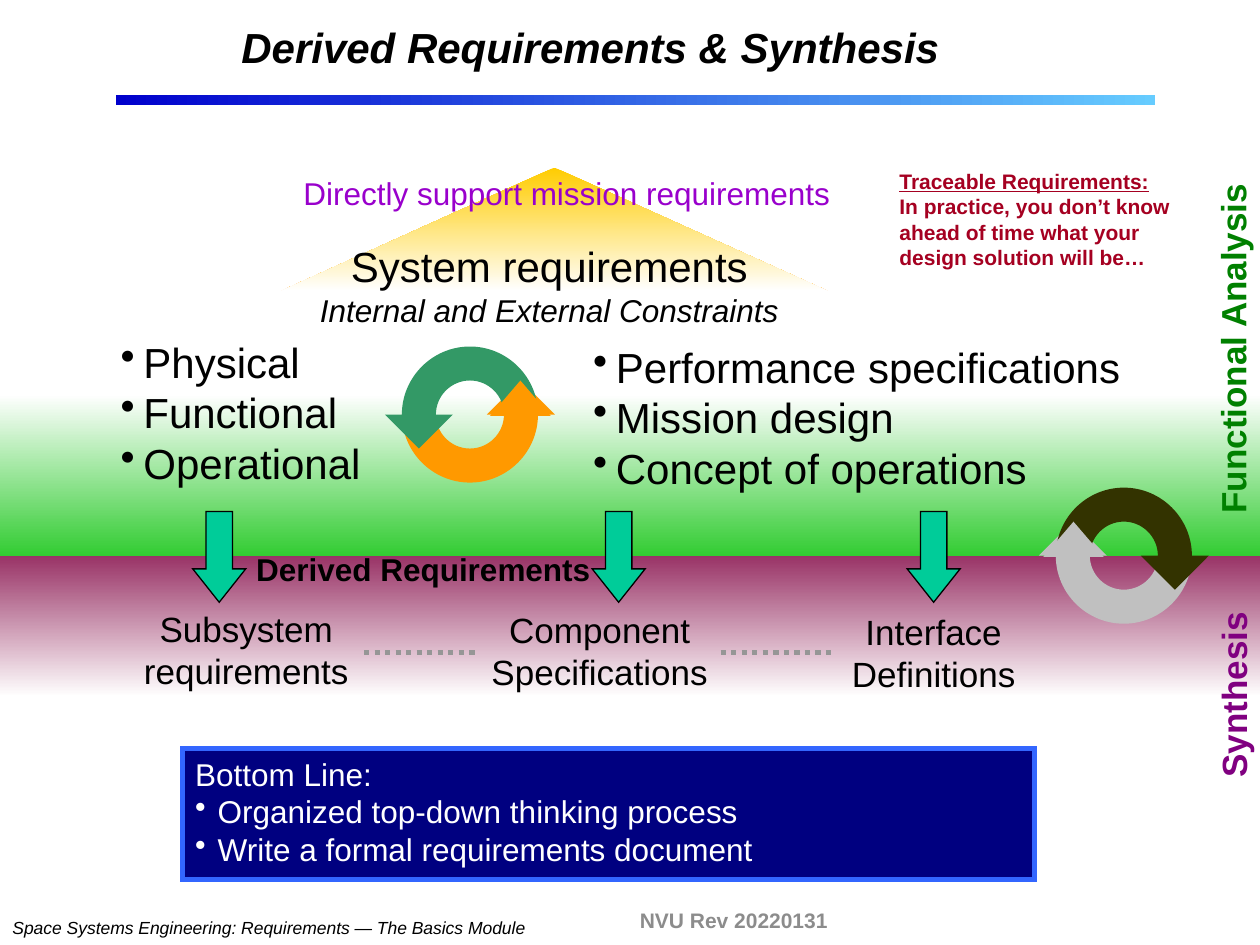
from dataclasses import dataclass

from lxml import etree
from pptx import Presentation
from pptx import util as u
from pptx.dml.color import RGBColor
from pptx.enum import dml, shapes, text
from pptx.oxml.ns import qn


@dataclass(frozen=True)
class Theme:
    font: str = "Arial"
    black: str = "000000"
    white: str = "FFFFFF"
    teal: str = "00CC99"
    dots: str = "969696"
    purple: str = "800080"
    green: str = "008000"
    violet: str = "9900CC"
    crimson: str = "A50021"
    footer: str = "8C8C8C"
    navy: str = "000080"
    frame: str = "3366FF"
    heading: int = 24
    label: int = 20
    body: int = 18
    note: int = 12
    small: int = 10


THEME = Theme()
SHAPE = shapes.MSO_SHAPE
CENTER = text.PP_ALIGN.CENTER
MIDDLE = text.MSO_ANCHOR.MIDDLE


def rgb(code):
    return RGBColor.from_string(code)


def place(box):
    return [u.Inches(value) for value in box]


def set_bullet(paragraph):
    properties = paragraph._p.get_or_add_pPr()
    etree.SubElement(properties, qn("a:buFontTx"))
    etree.SubElement(properties, qn("a:buChar"), char="•")


def write(frame, lines, size, color=THEME.black, align=None, anchor=None,
          wrap=True, indent=0):
    """Fill a text frame; each line is a string or (string, format values)."""
    frame.word_wrap = wrap
    frame.vertical_anchor = anchor or text.MSO_ANCHOR.TOP
    if anchor is None:
        frame.auto_size = text.MSO_AUTO_SIZE.SHAPE_TO_FIT_TEXT
    for index, line in enumerate(lines):
        content, extra = line if isinstance(line, tuple) else (line, {})
        extra = dict(extra)
        bulleted = extra.pop("bullet", False)
        paragraph = frame.paragraphs[0] if index == 0 else frame.add_paragraph()
        paragraph.alignment = align or text.PP_ALIGN.LEFT
        if indent:
            properties = paragraph._p.get_or_add_pPr()
            properties.set("marL", str(u.Inches(indent)))
            properties.set("indent", str(-u.Inches(indent)))
        if bulleted:
            set_bullet(paragraph)
        run = paragraph.add_run()
        run.text = content
        values = {"name": THEME.font, "size": u.Pt(size), **extra}
        for key, value in values.items():
            setattr(run.font, key, value)
        run.font.color.rgb = rgb(color)


def add_text(slide, box, lines, size, rotation=0, **options):
    label = slide.shapes.add_textbox(*place(box))
    label.rotation = rotation
    write(label.text_frame, lines, size, **options)


def paint(shape, fill, line=None, width=0):
    shape.shadow.inherit = False
    shape.fill.solid()
    shape.fill.fore_color.rgb = rgb(fill)
    if line:
        shape.line.color.rgb = rgb(line)
        shape.line.width = u.Pt(width)
        etree.SubElement(shape.line._get_or_add_ln(), qn("a:miter"), lim="800000")
    else:
        shape.line.fill.background()


def add_gradient(slide, kind, box, colors, angle=270):
    """Angle is counter-clockwise, so 270 runs from top to bottom."""
    shape = slide.shapes.add_shape(kind, *place(box))
    shape.shadow.inherit = False
    shape.line.fill.background()
    shape.fill.gradient()
    shape.fill.gradient_angle = angle
    for stop, color in zip(shape.fill.gradient_stops, colors):
        stop.color.rgb = rgb(color)


def bend(shape, starts):
    """Turn each three lines from the given indexes into one cubic curve."""
    lines = list(shape._element.iter(qn("a:lnTo")))
    for start in starts:
        trio = lines[start:start + 3]
        curve = etree.Element(qn("a:cubicBezTo"))
        trio[0].addprevious(curve)
        for line in trio:
            curve.append(line[0])
            line.getparent().remove(line)


def add_half_ring(slide, center, half, head, color):
    """Half ring with an arrowhead; half is 1 below, head is 1 at the right."""
    (cx, cy), outer, inner = center, 0.54, 0.27
    middle, reach = (outer + inner) / 2, 0.27
    k = 0.55
    arc = [(1, 0), (1, k), (k, 1), (0, 1), (-k, 1), (-1, k), (-1, 0)]
    offsets = [(inner * x, inner * y) for x, y in arc]
    offsets += [(outer * x, outer * y) for x, y in reversed(arc)]
    offsets += [(middle + reach, 0), (middle, -reach), (middle - reach, 0)]
    start, *rest = [place((cx + head * x, cy + half * y)) for x, y in offsets]
    builder = slide.shapes.build_freeform(*start)
    builder.add_line_segments(rest, close=True)
    ring = builder.convert_to_shape()
    bend(ring, (0, 3, 7, 10))
    paint(ring, color)


def add_cycle(slide, center, lower_head, lower, upper):
    """Two chasing arrows, with the tip of the lower one in front."""
    cx, cy = center
    add_half_ring(slide, center, 1, lower_head, lower)
    add_half_ring(slide, center, -1, -lower_head, upper)
    tip = slide.shapes.add_shape(
        SHAPE.ISOSCELES_TRIANGLE,
        *place((cx + lower_head * 0.4 - 0.24, cy - 0.27, 0.48, 0.28)))
    paint(tip, lower)


def add_header(slide, box):
    left, top, width, height = box
    add_gradient(slide, SHAPE.RECTANGLE, (left, top + 0.63, width, 0.08),
                 ("0000CC", "66CCFF"), angle=0)
    add_text(slide, (left + 0.33, top, 6.87, height),
             [("Derived Requirements & Synthesis", {"bold": True, "italic": True})],
             THEME.heading, align=CENTER, anchor=MIDDLE)


def add_bands(slide, box):
    left, top, width, height = box
    split = 1.28
    add_gradient(slide, SHAPE.RECTANGLE, (left, top + split, width, height - split),
                 ("993366", THEME.white))
    add_gradient(slide, SHAPE.RECTANGLE, (left, top, width, split),
                 (THEME.white, "33CC33"))


def add_system_peak(slide, box):
    left, top, width, height = box
    add_gradient(slide, SHAPE.ISOSCELES_TRIANGLE, box, ("FFCC00", THEME.white))
    add_text(slide, (left + 0.21, top + 0.53, 3.84, 0.8),
             [("System requirements", {}),
              ("Internal and External Constraints",
               {"size": u.Pt(THEME.body), "italic": True})],
             THEME.heading, align=CENTER, wrap=False)
    add_text(slide, (left + 0.08, top, 4.43, 0.4),
             ["Directly support mission requirements"], THEME.body,
             color=THEME.violet)


def add_bullets(slide, box, items):
    add_text(slide, box, [(item, {"bullet": True}) for item in items],
             THEME.heading, wrap=False, indent=0.18)


def add_derived(slide, box):
    """Row of derived items with dotted links and arrows pointing to them."""
    left, top, width, height = box
    items = (("Subsystem requirements", 0, 0.71, 1.97, 0.56),
             ("Component Specifications", 2.79, 0.72, 2, 3.73),
             ("Interface Definitions", 5.6, 0.74, 1.68, 6.23))
    for caption, x, y, item_width, arrow_x in items:
        add_text(slide, (left + x, top + y, item_width, 0.77), [caption],
                 THEME.label, align=CENTER)
        arrow = slide.shapes.add_shape(
            SHAPE.DOWN_ARROW, *place((left + arrow_x, top, 0.42, 0.72)))
        arrow.adjustments[0], arrow.adjustments[1] = 0.5, 0.63
        paint(arrow, THEME.teal, THEME.black, 0.75)
    for x in (1.92, 4.75):
        y = top + 1.12
        link = slide.shapes.add_connector(
            shapes.MSO_CONNECTOR.STRAIGHT,
            *place((left + x, y, left + x + 0.91, y)))
        link.line.color.rgb = rgb(THEME.dots)
        link.line.width = u.Pt(3)
        link.line.dash_style = dml.MSO_LINE.ROUND_DOT
        etree.SubElement(link._element.spPr, qn("a:effectLst"))
    add_text(slide, (left + 0.96, top + 0.26, 2.86, 0.4),
             [("Derived Requirements", {"bold": True})], THEME.body,
             align=CENTER, wrap=False)


def add_bottom_line(slide, box):
    panel = slide.shapes.add_shape(SHAPE.RECTANGLE, *place(box))
    paint(panel, THEME.navy, THEME.frame, 3)
    write(panel.text_frame,
          ["Bottom Line:",
           ("Organized top-down thinking process", {"bullet": True}),
           ("Write a formal requirements document", {"bullet": True})],
          THEME.body, color=THEME.white, indent=0.18)


def add_side_labels(slide):
    for caption, box, color in (
            ("Functional Analysis", (8.37, 2.55, 2.82, 0.43), THEME.green),
            ("Synthesis", (9.02, 5.29, 1.53, 0.43), THEME.purple)):
        add_text(slide, box, [(caption, {"bold": True})], THEME.label,
                 rotation=270, color=color, wrap=False)


def add_trace_note(slide, box):
    add_text(slide, box,
             [("Traceable Requirements:", {"bold": True, "underline": True}),
              ("In practice, you don’t know ahead of time what your design "
               "solution will be…", {"bold": True})],
             THEME.note, color=THEME.crimson)


def add_footer(slide, box):
    left, top, width, height = box
    add_text(slide, (left, top + 0.13, 4.28, 0.27),
             [("Space Systems Engineering: Requirements — The Basics Module",
               {"italic": True})], THEME.small, wrap=False)
    add_text(slide, (left + 4.98, top, 2.25, height),
             [("NVU Rev 20220131", {"bold": True})], THEME.note,
             color=THEME.footer, anchor=MIDDLE)


def main():
    deck = Presentation()
    deck.slide_width, deck.slide_height = u.Inches(10), u.Inches(7.5)
    slide = deck.slides.add_slide(deck.slide_layouts[6])
    add_bands(slide, (0, 3.13, 10, 2.4))
    add_header(slide, (0.92, 0.12, 8.25, 0.5))
    add_system_peak(slide, (2.23, 1.33, 4.34, 0.98))
    add_cycle(slide, (8.92, 4.41), -1, "C0C0C0", "333300")
    add_cycle(slide, (3.73, 3.29), 1, "FF9900", "339966")
    add_bullets(slide, (0.86, 2.62, 2.11, 1.3),
                ("Physical", "Functional", "Operational"))
    add_bullets(slide, (4.61, 2.66, 4.39, 1.3),
                ("Performance specifications", "Mission design",
                 "Concept of operations"))
    add_derived(slide, (0.97, 4.06, 7.28, 1.5))
    add_bottom_line(slide, (1.45, 5.94, 6.76, 1.04))
    add_side_labels(slide)
    add_trace_note(slide, (7.04, 1.29, 2.37, 0.9))
    add_footer(slide, (0, 7.1, 10, 0.4))
    deck.save("out.pptx")


if __name__ == "__main__":
    main()
